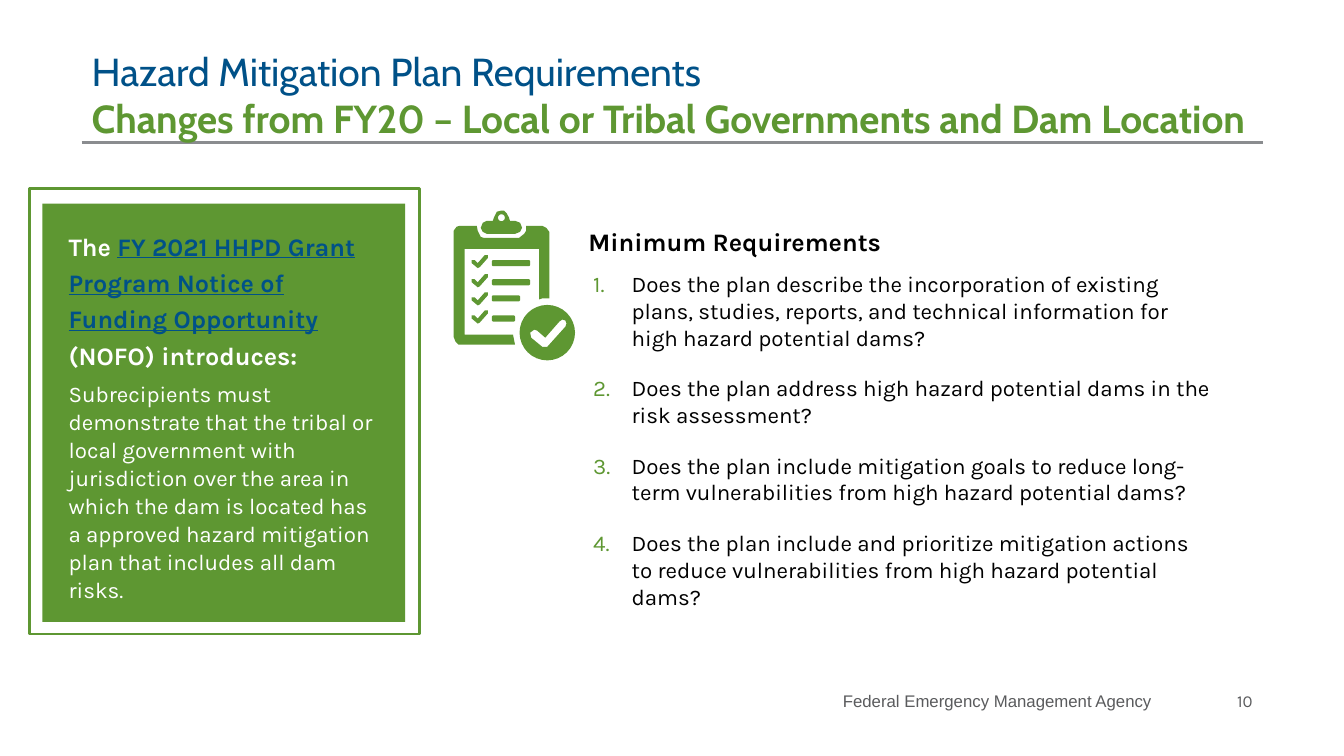
from dataclasses import dataclass
from math import cos, pi, sin

from lxml.etree import SubElement
from pptx import Presentation
from pptx.dml.color import RGBColor
from pptx.enum.shapes import MSO_CONNECTOR, MSO_SHAPE
from pptx.enum.text import MSO_ANCHOR, PP_ALIGN
from pptx.oxml.ns import qn
from pptx.util import Cm, Pt


@dataclass(frozen=True)
class Theme:
    green: str = "5E9732"
    blue: str = "005188"
    rule: str = "8A8C8F"
    footer: str = "5A5B5D"
    white: str = "FFFFFF"
    black: str = "000000"
    title_font: str = "Cabin"
    body_font: str = "Karla"
    footer_font: str = "Arial"
    title_size: float = 27.9
    heading_size: float = 18
    body_size: float = 16
    footer_size: float = 12
    line_width: float = 2


THEME = Theme()

REQUIREMENTS = [
    "Does the plan describe the incorporation of existing plans, studies, reports, and "
    "technical information for high hazard potential dams?",
    "Does the plan address high hazard potential dams in the risk assessment?",
    "Does the plan include mitigation goals to reduce long-term vulnerabilities from "
    "high hazard potential dams?",
    "Does the plan include and prioritize mitigation actions to reduce vulnerabilities "
    "from high hazard potential dams?",
]

# Icon outlines, in hundredths of an inch from the icon's top left corner.
ICON_UNIT = Cm(0.0254)
BOARD = [(6, 15), (23, 15), (24, 20), (27, 26), (30, 27), (65, 27), (70, 23), (72, 20),
         (72, 15), (88, 15), (92, 17), (95, 21), (95, 87), (88, 87), (85, 88), (85, 38),
         (11, 38), (11, 123), (59, 123), (61, 133), (5, 133), (2, 130), (0, 125),
         (0, 20), (3, 16)]
CLIP = [(47, 0), (50, 0), (53, 3), (55, 7), (56, 10), (61, 10), (66, 12), (68, 17),
        (66, 21), (61, 23), (33, 23), (29, 21), (27, 17), (29, 12), (33, 10), (39, 10),
        (40, 7), (43, 1)]
BADGE_TICK = [(108, 108), (105, 110), (91, 126), (83, 119), (80, 118), (76, 121),
              (77, 126), (88, 135), (93, 135), (111, 115), (112, 112), (111, 109)]
ROW_TICK = [(33, 0), (34, 0), (34, 3), (26, 12), (24, 13), (18, 8), (18, 5), (21, 5),
            (24, 8), (31, 0)]
TICK_TOPS = [44, 63, 81, 99]
BARS = [(49, 76), (68, 76), (84, 66), (104, 61)]  # top, right


def color(value):
    return RGBColor.from_string(value)


def add_run(paragraph, text, *, size=THEME.body_size, font=THEME.body_font,
            fill=THEME.black, bold=False, underline=False):
    run = paragraph.add_run()
    run.text = text
    run.font.size = Pt(size)
    run.font.name = font
    run.font.color.rgb = color(fill)
    run.font.bold = bold
    run.font.underline = underline


def add_paragraph(frame, runs, *, align=PP_ALIGN.LEFT, before=0, after=0, spacing=None):
    """Fill the first empty paragraph or a new one with (text, format) runs."""
    first = frame.paragraphs[0]
    paragraph = frame.add_paragraph() if first.runs else first
    paragraph.alignment = align
    paragraph.space_before = Pt(before)
    paragraph.space_after = Pt(after)
    if spacing:
        paragraph.line_spacing = Pt(spacing)
    for text, style in runs:
        add_run(paragraph, text, **style)
    return paragraph


def add_text_frame(slide, left, top, width, height, anchor=MSO_ANCHOR.TOP):
    frame = slide.shapes.add_textbox(left, top, width, height).text_frame
    frame.word_wrap = True
    frame.vertical_anchor = anchor
    return frame


def number_paragraph(paragraph):
    properties = paragraph._p.get_or_add_pPr()
    properties.set("marL", str(Cm(1.09)))
    properties.set("indent", str(Cm(-0.97)))
    bullet_color = SubElement(properties, qn("a:buClr"))
    SubElement(bullet_color, qn("a:srgbClr"), val=THEME.green)
    SubElement(properties, qn("a:buAutoNum"), type="arabicPeriod")


def add_rectangle(slide, left, top, width, height, *, fill=None, line=None):
    shape = slide.shapes.add_shape(MSO_SHAPE.RECTANGLE, left, top, width, height)
    shape.shadow.inherit = False
    if fill:
        shape.fill.solid()
        shape.fill.fore_color.rgb = color(fill)
    else:
        shape.fill.background()
    if line:
        shape.line.color.rgb = color(line)
        shape.line.width = Pt(THEME.line_width)
    else:
        shape.line.fill.background()


def add_header(slide, left, top, width, height):
    rule_top = top + Cm(1.8)
    rule = slide.shapes.add_connector(
        MSO_CONNECTOR.STRAIGHT, left, rule_top, left + width, rule_top)
    rule.line.color.rgb = color(THEME.rule)
    rule.line.width = Pt(THEME.line_width)
    SubElement(rule._element.spPr, qn("a:effectLst"))
    frame = add_text_frame(slide, left, top, width, height, MSO_ANCHOR.BOTTOM)
    frame.margin_right = 0
    frame.margin_bottom = Cm(0.3)
    style = dict(size=THEME.title_size, font=THEME.title_font)
    add_paragraph(frame, [("Hazard Mitigation Plan Requirements",
                           dict(style, fill=THEME.blue))])
    add_paragraph(frame, [("Changes from FY20 – Local or Tribal Governments and Dam Location",
                           dict(style, fill=THEME.green, bold=True))])


def add_notice_panel(slide, left, top, width, height):
    add_rectangle(slide, left + Cm(0.33), top + Cm(0.38), width - Cm(0.69),
                  height - Cm(0.69), fill=THEME.green)
    add_rectangle(slide, left, top, width, height, line=THEME.green)
    frame = add_text_frame(slide, left + Cm(0.74), top + Cm(0.79),
                           width - Cm(1.5), height - Cm(2.11))
    heading = dict(size=THEME.heading_size, fill=THEME.white, bold=True)
    link = dict(heading, fill=THEME.blue, underline=True)
    add_paragraph(frame, [
        ("The ", heading),
        ("FY 2021 HHPD Grant Program Notice of Funding Opportunity", link),
        (" (NOFO) introduces:", heading)], after=6, spacing=26)
    for text in ("Subrecipients must demonstrate that the tribal or local government "
                 "with jurisdiction over the area in",
                 "which the dam is located has a approved hazard mitigation plan that "
                 "includes all dam risks."):
        add_paragraph(frame, [(text, dict(fill=THEME.white))], spacing=20)


def circle(center_x, center_y, radius, steps=32):
    angles = [2 * pi * step / steps for step in range(steps)]
    return [(center_x + radius * cos(angle), center_y + radius * sin(angle))
            for angle in angles]


def bar(top, right, left=38, height=6):
    bottom = top + height
    return [(left + 1, top), (right - 1, top), (right, top + 1), (right, bottom - 1),
            (right - 1, bottom), (left + 1, bottom), (left, bottom - 1), (left, top + 1)]


def add_checklist_icon(slide, left, top):
    """Draw the clipboard as one outline whose inner contours are holes."""
    contours = [BOARD, CLIP, circle(47.5, 7, 3.5, 12), circle(93, 121, 27.5), BADGE_TICK]
    contours += [[(x, y + tick_top) for x, y in ROW_TICK] for tick_top in TICK_TOPS]
    contours += [bar(bar_top, right) for bar_top, right in BARS]
    builder = None
    for contour in contours:
        points = [(left + x * ICON_UNIT, top + y * ICON_UNIT) for x, y in contour]
        if builder is None:
            builder = slide.shapes.build_freeform(*points[0])
        else:
            builder.move_to(*points[0])
        builder.add_line_segments(points[1:], close=True)
    icon = builder.convert_to_shape()
    icon.shadow.inherit = False
    icon.fill.solid()
    icon.fill.fore_color.rgb = color(THEME.green)
    icon.line.fill.background()


def add_requirements(slide, left, top, width, height):
    frame = add_text_frame(slide, left, top, width, height)
    add_paragraph(frame, [("Minimum Requirements", dict(size=THEME.heading_size, bold=True))],
                  before=4.8, after=4.8)
    for requirement in REQUIREMENTS:
        number_paragraph(add_paragraph(frame, [(requirement, {})], before=4.8, after=12))


def add_footer(slide, left, top, width, height):
    number_width = Cm(2.54)
    agency_width = width - number_width
    for text, font, x, part_width in (
            ("Federal Emergency Management Agency", THEME.footer_font, left, agency_width),
            ("10", THEME.body_font, left + agency_width, number_width)):
        frame = add_text_frame(slide, x, top, part_width, height, MSO_ANCHOR.MIDDLE)
        style = dict(size=THEME.footer_size, font=font, fill=THEME.footer)
        add_paragraph(frame, [(text, style)], align=PP_ALIGN.RIGHT)


def main():
    presentation = Presentation()
    presentation.slide_width = Cm(33.87)
    presentation.slide_height = Cm(19.05)
    slide = presentation.slides.add_slide(presentation.slide_layouts[6])
    add_header(slide, Cm(2.06), Cm(1.8), Cm(29.77), Cm(2.06))
    add_notice_panel(slide, Cm(0.74), Cm(4.75), Cm(9.83), Cm(11.23))
    add_checklist_icon(slide, Cm(11.43), Cm(5.31))
    add_requirements(slide, Cm(14.58), Cm(5.59), Cm(16.26), Cm(9.35))
    add_footer(slide, Cm(16.94), Cm(17.15), Cm(14.88), Cm(1.02))
    presentation.save("out.pptx")


if __name__ == "__main__":
    main()
